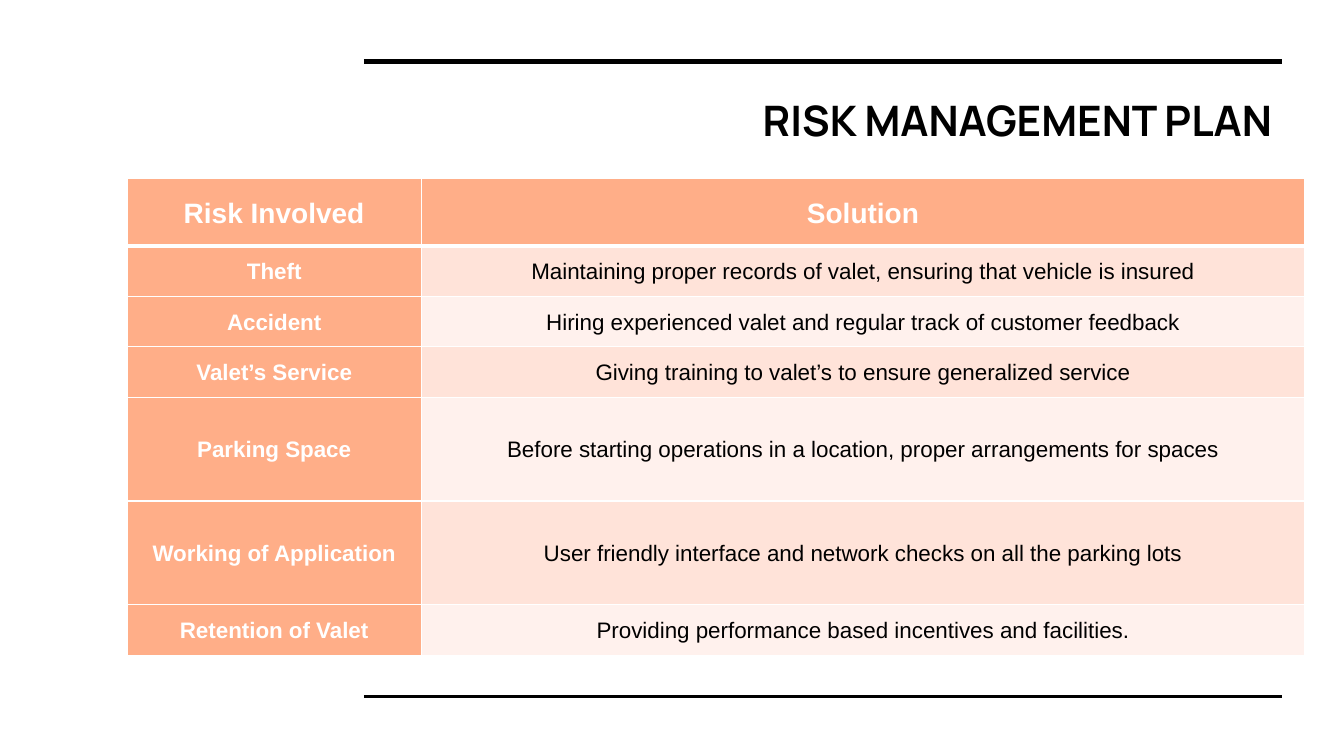
from lxml import etree
from pptx import Presentation
from pptx.dml.color import RGBColor
from pptx.enum.shapes import MSO_CONNECTOR
from pptx.enum.text import MSO_ANCHOR, PP_ALIGN
from pptx.oxml import parse_xml
from pptx.oxml.ns import nsdecls, qn
from pptx.util import Inches, Pt

BLACK, WHITE, PEACH = "000000", "FFFFFF", "FFAE88"
BANDS = ["FFE3D9", "FFF1ED"]


def rgb(value):
    return RGBColor.from_string(value)


def style_font(font, color, **values):
    font.color.rgb = rgb(color)
    for name, value in values.items():
        setattr(font, name, value)


prs = Presentation()
prs.slide_width, prs.slide_height = Inches(13.33), Inches(7.5)
slide = prs.slides.add_slide(prs.slide_layouts[5])

# Rules above and below the content
for y, weight in [(0.61, 3), (6.91, 1.5)]:
    rule = slide.shapes.add_connector(
        MSO_CONNECTOR.STRAIGHT, Inches(3.61), Inches(y), Inches(12.72), Inches(y))
    rule.line.color.rgb = rgb(BLACK)
    rule.line.width = Pt(weight)
    etree.SubElement(rule._element.spPr, qn("a:effectLst"))

# Title
title = slide.shapes.title
title.left, title.top = Inches(6.91), Inches(0.84)
title.width, title.height = Inches(5.81), Inches(0.69)
heading = title.text_frame
heading.text = "RISK MANAGEMENT PLAN"
heading.vertical_anchor = MSO_ANCHOR.MIDDLE
for side in ("left", "top", "right", "bottom"):
    setattr(heading, f"margin_{side}", Inches(0.1))
heading.paragraphs[0].alignment = PP_ALIGN.RIGHT
style_font(heading.paragraphs[0].runs[0].font, BLACK, name="Manrope", size=Pt(30), bold=True)

# Risk table: text of both columns and row height
risks = [
    ("Risk Involved", "Solution", 0.67),
    ("Theft", "Maintaining proper records of valet, ensuring that vehicle is insured", 0.5),
    ("Accident", "Hiring experienced valet and regular track of customer feedback", 0.5),
    ("Valet’s Service", "Giving training to valet’s to ensure generalized service", 0.5),
    ("Parking Space",
     "Before starting operations in a location, proper arrangements for spaces", 1.03),
    ("Working of Application",
     "User friendly interface and network checks on all the parking lots", 1.03),
    ("Retention of Valet", "Providing performance based incentives and facilities.", 0.5),
]
column_widths = [2.92, 8.76]
table = slide.shapes.add_table(
    len(risks), len(column_widths), Inches(1.26), Inches(1.77),
    Inches(sum(column_widths)), Inches(sum(height for *_, height in risks))).table
for column, width in zip(table.columns, column_widths):
    column.width = Inches(width)

cell_format = {
    "vertical_anchor": MSO_ANCHOR.MIDDLE,
    "margin_left": Inches(0.07), "margin_right": Inches(0.07),
    "margin_top": 0, "margin_bottom": 0,
}
for row, (risk, solution, height) in enumerate(risks):
    table.rows[row].height = Inches(height)
    for col, words in enumerate((risk, solution)):
        cell = table.cell(row, col)
        is_label = row == 0 or col == 0
        cell.text = words
        for name, value in cell_format.items():
            setattr(cell, name, value)

        paragraph = cell.text_frame.paragraphs[0]
        paragraph.alignment = PP_ALIGN.CENTER
        paragraph.line_spacing = 1.07
        style_font(paragraph.runs[0].font, WHITE if is_label else BLACK, name="Arial",
                   size=Pt(16 if row else 20), bold=is_label)

        # Borders precede the fill; the line under the header is thicker
        for edge in ("L", "R", "T", "B"):
            thick = (row, edge) in [(0, "B"), (1, "T")]
            cell._tc.get_or_add_tcPr().append(parse_xml(
                f'<a:ln{edge} {nsdecls("a")} w="{Pt(3 if thick else 1)}"><a:solidFill>'
                f'<a:srgbClr val="{WHITE}"/></a:solidFill></a:ln{edge}>'))
        cell.fill.solid()
        cell.fill.fore_color.rgb = rgb(PEACH if is_label else BANDS[(row - 1) % 2])

prs.save("out.pptx")
